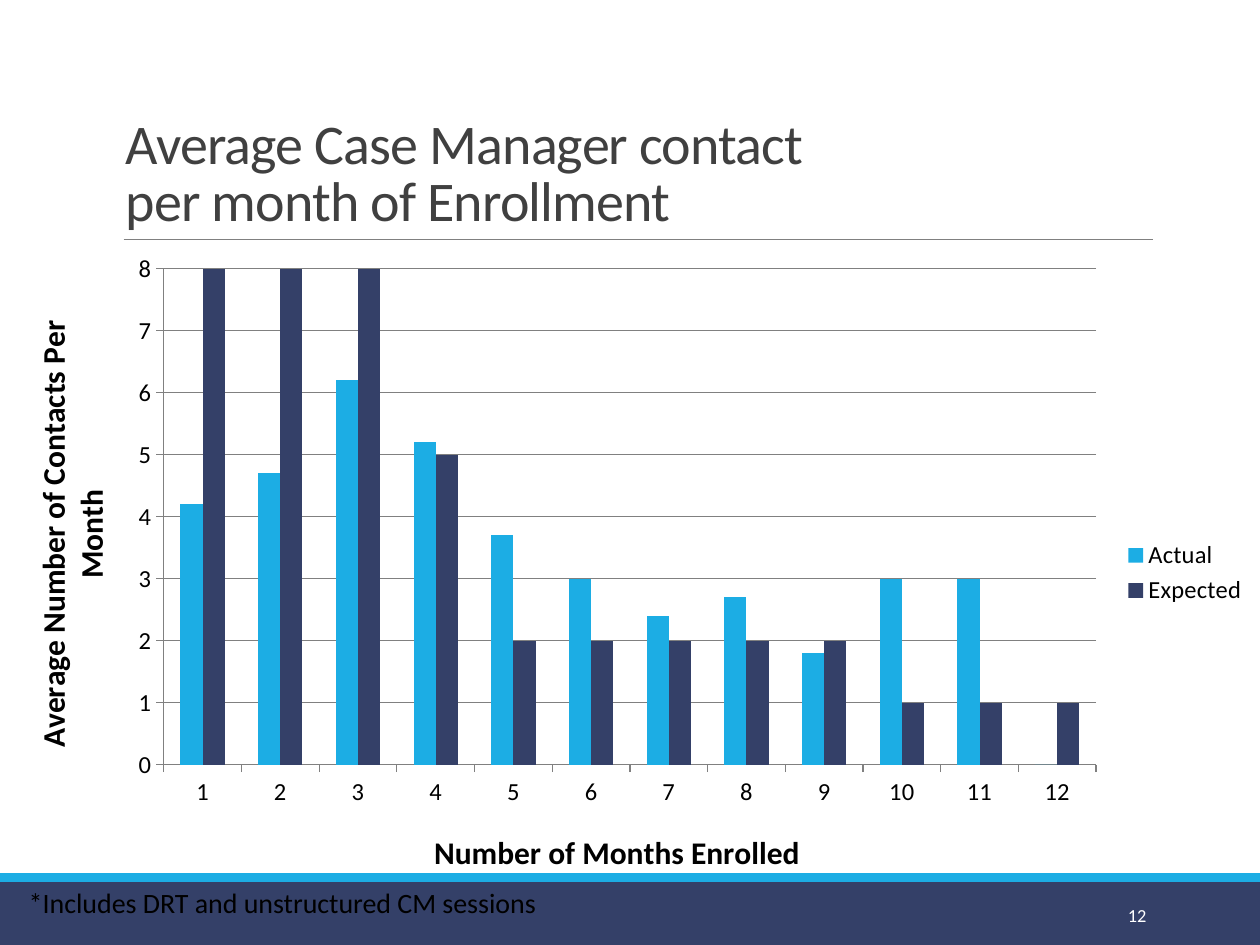
from lxml import etree
from pptx import Presentation
from pptx.chart.data import CategoryChartData
from pptx.dml.color import RGBColor
from pptx.enum.chart import XL_CHART_TYPE, XL_LEGEND_POSITION, XL_TICK_MARK
from pptx.enum.shapes import MSO_CONNECTOR, MSO_SHAPE
from pptx.enum.text import MSO_ANCHOR, PP_ALIGN
from pptx.oxml.ns import qn
from pptx.util import Cm, Pt

COLUMN = XL_CHART_TYPE.COLUMN_CLUSTERED
RIGHT_SIDE = XL_LEGEND_POSITION.RIGHT
OUTSIDE, NO_TICK = XL_TICK_MARK.OUTSIDE, XL_TICK_MARK.NONE
RECT, STRAIGHT = MSO_SHAPE.RECTANGLE, MSO_CONNECTOR.STRAIGHT
TOP, MIDDLE, BOTTOM = MSO_ANCHOR.TOP, MSO_ANCHOR.MIDDLE, MSO_ANCHOR.BOTTOM
LEFT, RIGHT = PP_ALIGN.LEFT, PP_ALIGN.RIGHT

FONT = "Calibri"
NAVY, SKY, GRAY, BLACK = "344068", "1CADE4", "808080", "000000"
ACTUAL = (4.2, 4.7, 6.2, 5.2, 3.7, 3, 2.4, 2.7, 1.8, 3, 3, 0)
EXPECTED = (8, 8, 8, 5, 2, 2, 2, 2, 2, 1, 1, 1)


def color(code):
    return RGBColor.from_string(code)


def style(font, size, code=BLACK, bold=False):
    font.name, font.size, font.bold = FONT, Pt(size), bold
    font.color.rgb = color(code)


def paint(line, code, width):
    line.color.rgb = color(code)
    line.width = Pt(width)


def add_text(slide, text, box, size, code=BLACK, anchor=TOP, align=LEFT,
             wrap=True, lead=None, track=None):
    frame = slide.shapes.add_textbox(*map(Cm, box)).text_frame
    frame.word_wrap, frame.vertical_anchor = wrap, anchor
    para = frame.paragraphs[0]
    para.text, para.alignment = text, align
    if lead:
        para.line_spacing = lead
    for run in para.runs:
        style(run.font, size, code)
        if track:
            run.font._element.set("spc", str(track))


def add_band(slide, top, height, code):
    band = slide.shapes.add_shape(RECT, 0, Cm(top), Cm(25.4), Cm(height))
    band.shadow.inherit = False
    band.fill.solid()
    band.fill.fore_color.rgb = color(code)
    band.line.fill.background()


def add_rule(slide, left, right, top):
    rule = slide.shapes.add_connector(
        STRAIGHT, Cm(left), Cm(top), Cm(right), Cm(top))
    paint(rule.line, GRAY, 0.5)
    etree.SubElement(rule._element.spPr, qn("a:effectLst"))


def set_place(part, index, **place):
    """Give a chart part a manual layout, in shares of the chart."""
    for old in part.findall(qn("c:layout")):
        part.remove(old)
    layout = etree.Element(qn("c:layout"))
    manual = etree.SubElement(layout, qn("c:manualLayout"))
    if "w" in place:
        etree.SubElement(manual, qn("c:layoutTarget")).set("val", "inner")
    for mode in ("xMode", "yMode"):
        etree.SubElement(manual, qn("c:" + mode)).set("val", "edge")
    for key, share in place.items():
        etree.SubElement(manual, qn("c:" + key)).set("val", str(share))
    part.insert(index, layout)


def set_axis(axis, title, x, y):
    axis.major_tick_mark, axis.minor_tick_mark = OUTSIDE, NO_TICK
    style(axis.tick_labels.font, 14)
    paint(axis.format.line, GRAY, 0.75)
    frame = axis.axis_title.text_frame
    frame.text = title
    style(frame.paragraphs[0].runs[0].font, 18, bold=True)
    set_place(axis.axis_title._element, 1, x=x, y=y)


def add_chart(slide):
    data = CategoryChartData()
    data.categories = [str(month) for month in range(1, 13)]
    data.add_series("Actual", ACTUAL)
    data.add_series("Expected", EXPECTED)
    chart = slide.shapes.add_chart(
        COLUMN, 0, Cm(4.88), Cm(25.4), Cm(13.34), data).chart
    style(chart.font, 18)
    chart.has_title = False

    # Columns
    plot = chart.plots[0]
    plot.gap_width, plot.overlap, plot.vary_by_categories = 150, 0, False
    for series, code in zip(plot.series, (SKY, NAVY)):
        series.format.fill.solid()
        series.format.fill.fore_color.rgb = color(code)
    area = chart._chartSpace.chart.plotArea
    set_place(area, 0, x=0.13, y=0.04, w=0.74, h=0.75)

    # Axes
    set_axis(chart.category_axis, "Number of Months Enrolled", 0.34, 0.88)
    axis = chart.value_axis
    set_axis(axis, "Average Number of Contacts Per Month", 0.02, 0.11)
    axis.minimum_scale, axis.maximum_scale, axis.major_unit = 0, 8, 1
    axis.tick_labels.number_format = "0"
    axis.tick_labels.number_format_is_linked = False
    paint(axis.major_gridlines.format.line, GRAY, 0.75)

    # Legend
    chart.has_legend = True
    chart.legend.position = RIGHT_SIDE
    chart.legend.include_in_layout = False
    style(chart.legend.font, 14)


def main():
    deck = Presentation()
    deck.slide_width, deck.slide_height = Cm(25.4), Cm(19.05)
    slide = deck.slides.add_slide(deck.slide_layouts[6])

    # Footer bands and title rule
    add_band(slide, 17.78, 1.27, NAVY)
    add_band(slide, 17.6, 0.18, SKY)
    add_rule(slide, 2.49, 23.24, 4.83)

    # Title and chart
    add_text(slide, "Average Case Manager contact \nper month of Enrollment",
             (2.29, 0.79, 20.96, 4.04), 32, "404040", anchor=BOTTOM,
             lead=0.85, track=-50)
    add_chart(slide)

    # Slide number and footnote
    add_text(slide, "12", (20.62, 17.93, 2.74, 1.02), 10.5, "FFFFFF",
             anchor=MIDDLE, align=RIGHT)
    add_text(slide, "*Includes DRT and unstructured CM sessions",
             (0.33, 17.73, 12.52, 0.94), 16, wrap=False)

    deck.save("out.pptx")


if __name__ == "__main__":
    main()
